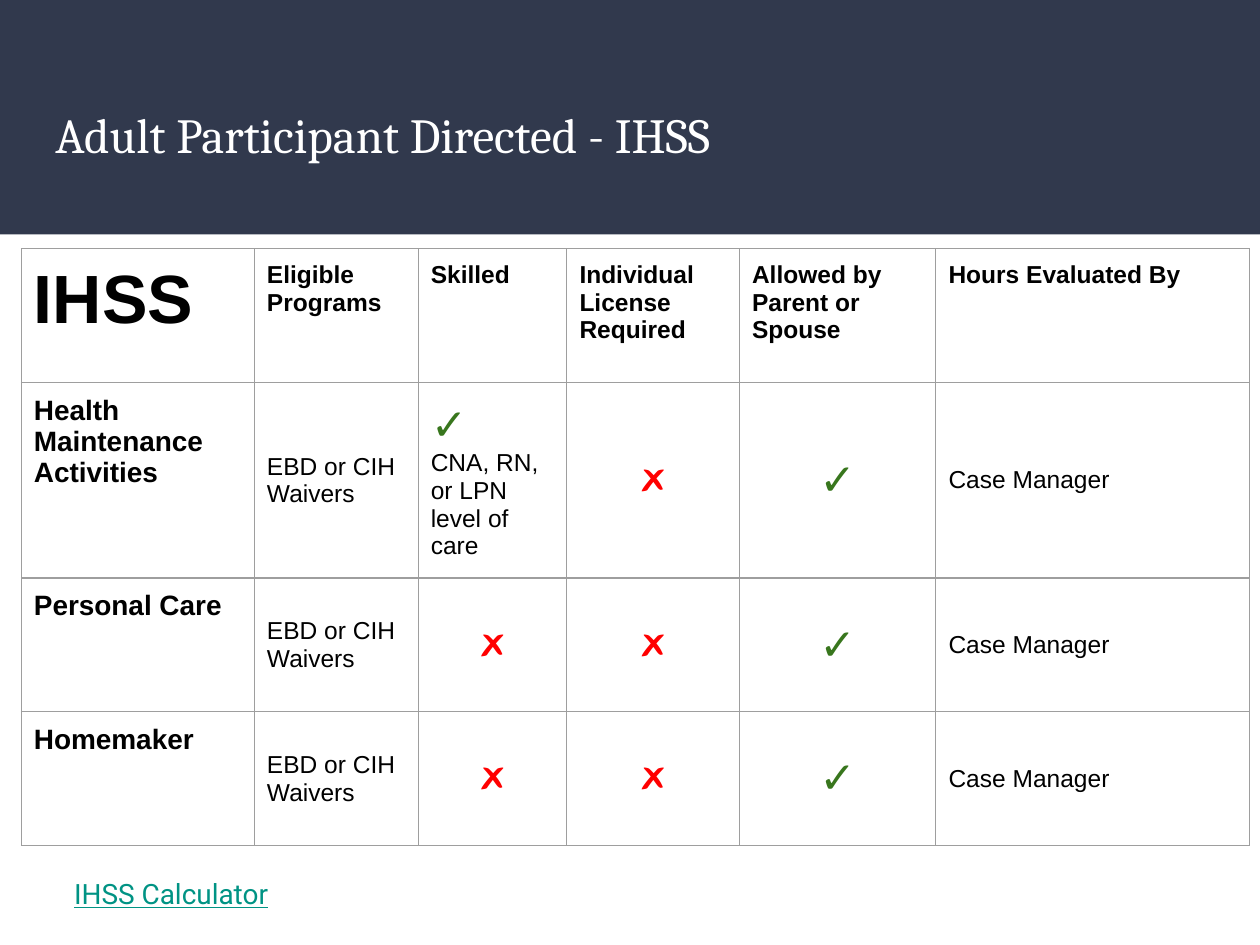
from lxml import etree
from pptx import Presentation
from pptx.dml.color import RGBColor
from pptx.enum.shapes import MSO_SHAPE
from pptx.enum.text import MSO_ANCHOR, PP_ALIGN
from pptx.oxml.ns import qn
from pptx.util import Pt

RECTANGLE = MSO_SHAPE.RECTANGLE
TOP, MIDDLE = MSO_ANCHOR.TOP, MSO_ANCHOR.MIDDLE
LEFT, CENTER = PP_ALIGN.LEFT, PP_ALIGN.CENTER

NAVY = RGBColor(0x31, 0x39, 0x4D)
WHITE = RGBColor(0xFF, 0xFF, 0xFF)
BLACK = RGBColor(0, 0, 0)
GREEN = RGBColor(0x38, 0x76, 0x1D)
RED = RGBColor(0xFF, 0, 0)
TEAL = RGBColor(0x00, 0x93, 0x84)
BORDER_GRAY = RGBColor(0x9E, 0x9E, 0x9E)

INSET = Pt(7.2)
COLUMN_WIDTHS = [133.2, 93.6, 85, 98.6, 112.3, 179.3]
ROW_HEIGHT = 76.5
CHECK, CROSS = "✓", "🗶"
MARK_COLORS = {CHECK: GREEN, CROSS: RED}

HEADERS = ["IHSS", "Eligible\nPrograms", "Skilled", "Individual License Required",
           "Allowed by Parent or Spouse", "Hours Evaluated By"]
# Service name and what its "Skilled" cell holds
SERVICES = [
    ("Health Maintenance Activities", CHECK + "\nCNA, RN, or LPN level of care"),
    ("Personal Care", CROSS),
    ("Homemaker", CROSS),
]


def style_paragraph(paragraph, size, color=BLACK, name="Arial", bold=False):
    font = paragraph.font
    font.name, font.size, font.bold = name, Pt(size), bold
    font.color.rgb = color


def set_insets(target):
    target.margin_left = target.margin_right = INSET
    target.margin_top = target.margin_bottom = INSET


def add_band(slide, width, height):
    band = slide.shapes.add_shape(RECTANGLE, 0, 0, Pt(width), Pt(height))
    band.shadow.inherit = False
    band.fill.solid()
    band.fill.fore_color.rgb = NAVY
    band.line.fill.background()


def add_text(slide, text, left, top, width, height, size, color, name):
    box = slide.shapes.add_textbox(Pt(left), Pt(top), Pt(width), Pt(height))
    frame = box.text_frame
    frame.word_wrap = True
    frame.vertical_anchor = TOP
    set_insets(frame)
    frame.text = text
    style_paragraph(frame.paragraphs[0], size, color, name)
    return frame.paragraphs[0]


def set_borders(cell):
    properties = cell._tc.get_or_add_tcPr()
    for position, tag in enumerate(("a:lnL", "a:lnR", "a:lnT", "a:lnB")):
        line = etree.Element(qn(tag), w=str(Pt(0.75)))
        fill = etree.SubElement(line, qn("a:solidFill"))
        etree.SubElement(fill, qn("a:srgbClr"), val=str(BORDER_GRAY))
        properties.insert(position, line)


def fill_cell(cell, text, size=14, bold=False, anchor=MIDDLE):
    cell.fill.background()
    set_insets(cell)
    cell.vertical_anchor = anchor
    set_borders(cell)
    cell.text_frame.text = text
    for paragraph in cell.text_frame.paragraphs:
        mark = paragraph.text
        if mark in MARK_COLORS:
            style_paragraph(paragraph, 25, MARK_COLORS[mark], bold=mark == CHECK)
        else:
            style_paragraph(paragraph, size, bold=bold)
        # A mark alone in its cell is centred
        paragraph.alignment = CENTER if text in MARK_COLORS else LEFT


def add_service_table(slide, left, top):
    row_count = len(SERVICES) + 1
    table = slide.shapes.add_table(
        row_count, len(HEADERS), Pt(left), Pt(top),
        Pt(sum(COLUMN_WIDTHS)), Pt(ROW_HEIGHT * row_count)).table
    table.first_row = table.horz_banding = False
    for column, width in zip(table.columns, COLUMN_WIDTHS):
        column.width = Pt(width)
    for row in table.rows:
        row.height = Pt(ROW_HEIGHT)

    # Header row
    for index, header in enumerate(HEADERS):
        fill_cell(table.cell(0, index), header, 14 if index else 39, True, TOP)

    # One row per service
    for row_index, (service, skilled) in enumerate(SERVICES, start=1):
        fill_cell(table.cell(row_index, 0), service, 16, True, TOP)
        values = ["EBD or CIH Waivers", skilled, CROSS, CHECK, "Case Manager"]
        for index, value in enumerate(values, start=1):
            fill_cell(table.cell(row_index, index), value)


def main():
    presentation = Presentation()
    presentation.slide_width, presentation.slide_height = Pt(720), Pt(540)
    slide = presentation.slides.add_slide(presentation.slide_layouts[6])

    # Title band
    add_band(slide, 720, 134)
    add_text(slide, "Adult Participant Directed - IHSS",
             24.5, 52.6, 671, 65.5, 28, WHITE, "Cambria")

    # Services
    add_service_table(slide, 12.2, 142.2)

    # Calculator reference
    calculator = add_text(slide, "IHSS Calculator",
                          35.3, 493.9, 582.5, 33.8, 16, TEAL, "Roboto")
    calculator.font.underline = True

    presentation.save("out.pptx")


if __name__ == "__main__":
    main()
